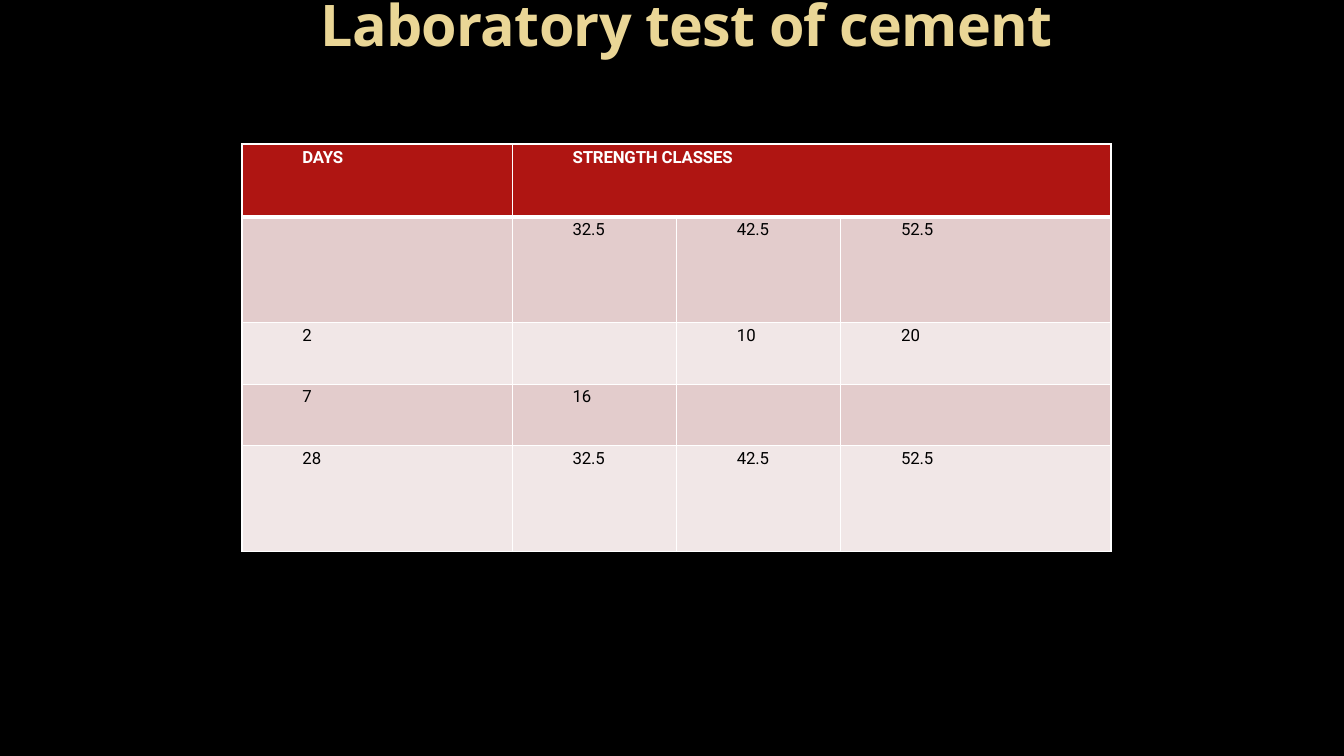
from lxml import etree
from pptx import Presentation
from pptx import util as u
from pptx.dml.color import RGBColor
from pptx.enum import text
from pptx.oxml import ns

COLORS = {
    "background": "000000",
    "title": "EAD696",
    "title_end": "E7D081",
    "header": "AF1512",
    "header_text": "FFFFFF",
    "dark_band": "E3CCCC",
    "light_band": "F1E7E7",
    "body_text": "000000",
    "border": "FFFFFF",
}
COLUMN_WIDTHS = [6.81, 4.14, 4.14, 6.81]
ROW_HEIGHTS = [1.83, 2.67, 1.55, 1.55, 2.67]
STRENGTHS = [
    ["DAYS", "STRENGTH CLASSES", "", ""],
    ["", "32.5", "42.5", "52.5"],
    ["2", "", "10", "20"],
    ["7", "16", "", ""],
    ["28", "32.5", "42.5", "52.5"],
]


def color(name):
    return RGBColor.from_string(COLORS[name])


def write(paragraph, content, font, size, fill, end_fill=None, bold=False,
          spacing=0, before=0, indent=0, align=text.PP_ALIGN.LEFT):
    paragraph.alignment = align
    paragraph.space_before = u.Pt(before)
    paragraph.line_spacing = 1.0
    paragraph._p.get_or_add_pPr().set("marL", str(u.Cm(indent)))
    run = paragraph.add_run()
    run.text = content
    run.font.name = font
    run.font.size = u.Pt(size)
    run.font.bold = bold
    run._r.get_or_add_rPr().set("spc", str(round(spacing * 100)))
    if end_fill:
        run.font.fill.gradient()
        run.font.fill.gradient_angle = 280
        stops = run.font.fill.gradient_stops
        for stop, name, position in zip(stops, (fill, end_fill), (0.73, 1)):
            stop.color.rgb = color(name)
            stop.position = position
    else:
        run.font.color.rgb = color(fill)


def set_borders(cell, widths):
    properties = cell._tc.get_or_add_tcPr()
    for index, (side, width) in enumerate(zip("LRTB", widths)):
        line = etree.Element(ns.qn(f"a:ln{side}"), w=str(u.Pt(width)))
        fill = etree.SubElement(line, ns.qn("a:solidFill"))
        etree.SubElement(fill, ns.qn("a:srgbClr"), val=COLORS["border"])
        properties.insert(index, line)


def add_title(slide, left, top, width, height):
    shape = slide.shapes.add_textbox(u.Cm(left), u.Cm(top), u.Cm(width), u.Cm(height))
    frame = shape.text_frame
    frame.word_wrap = True
    frame.vertical_anchor = text.MSO_ANCHOR.MIDDLE
    frame.margin_left = frame.margin_right = frame.margin_bottom = 0
    frame.margin_top = u.Cm(0.05)
    write(frame.paragraphs[0], "Laboratory test of cement", "Open Sans", 41,
          "title", end_fill="title_end", bold=True, spacing=-0.5, before=1.3,
          indent=0.03, align=text.PP_ALIGN.CENTER)


def add_strength_table(slide, left, top, width, height):
    table = slide.shapes.add_table(
        len(ROW_HEIGHTS), len(COLUMN_WIDTHS),
        u.Cm(left), u.Cm(top), u.Cm(width), u.Cm(height)).table
    for column, share in zip(table.columns, COLUMN_WIDTHS):
        column.width = u.Cm(width * share / sum(COLUMN_WIDTHS))
    for row, share in zip(table.rows, ROW_HEIGHTS):
        row.height = u.Cm(height * share / sum(ROW_HEIGHTS))
    table.cell(0, 1).merge(table.cell(0, 3))

    for row, values in enumerate(STRENGTHS):
        header = row == 0
        band = "header" if header else "dark_band" if row % 2 else "light_band"
        for column, value in enumerate(values):
            cell = table.cell(row, column)
            cell.fill.solid()
            cell.fill.fore_color.rgb = color(band)
            set_borders(cell, (1, 1, 3 if row == 1 else 1, 3 if header else 1))
            cell.margin_left = cell.margin_right = cell.margin_bottom = 0
            cell.margin_top = u.Cm(0.1 if header else 0.08)
            if value:
                write(cell.text_frame.paragraphs[0], value, "Roboto", 12,
                      "header_text" if header else "body_text", bold=header,
                      spacing=-0.1 if header or "." in value else 0,
                      before=3.1 if header else 1.9, indent=1.52)


def main():
    presentation = Presentation()
    presentation.slide_width = u.Cm(33.87)
    presentation.slide_height = u.Cm(19.05)
    slide = presentation.slides.add_slide(presentation.slide_layouts[6])
    slide.background.fill.solid()
    slide.background.fill.fore_color.rgb = color("background")
    add_title(slide, 0.71, -0.33, 33.16, 1.8)
    add_strength_table(slide, 6.1, 3.63, 21.9, 10.27)
    presentation.save("out.pptx")


if __name__ == "__main__":
    main()
